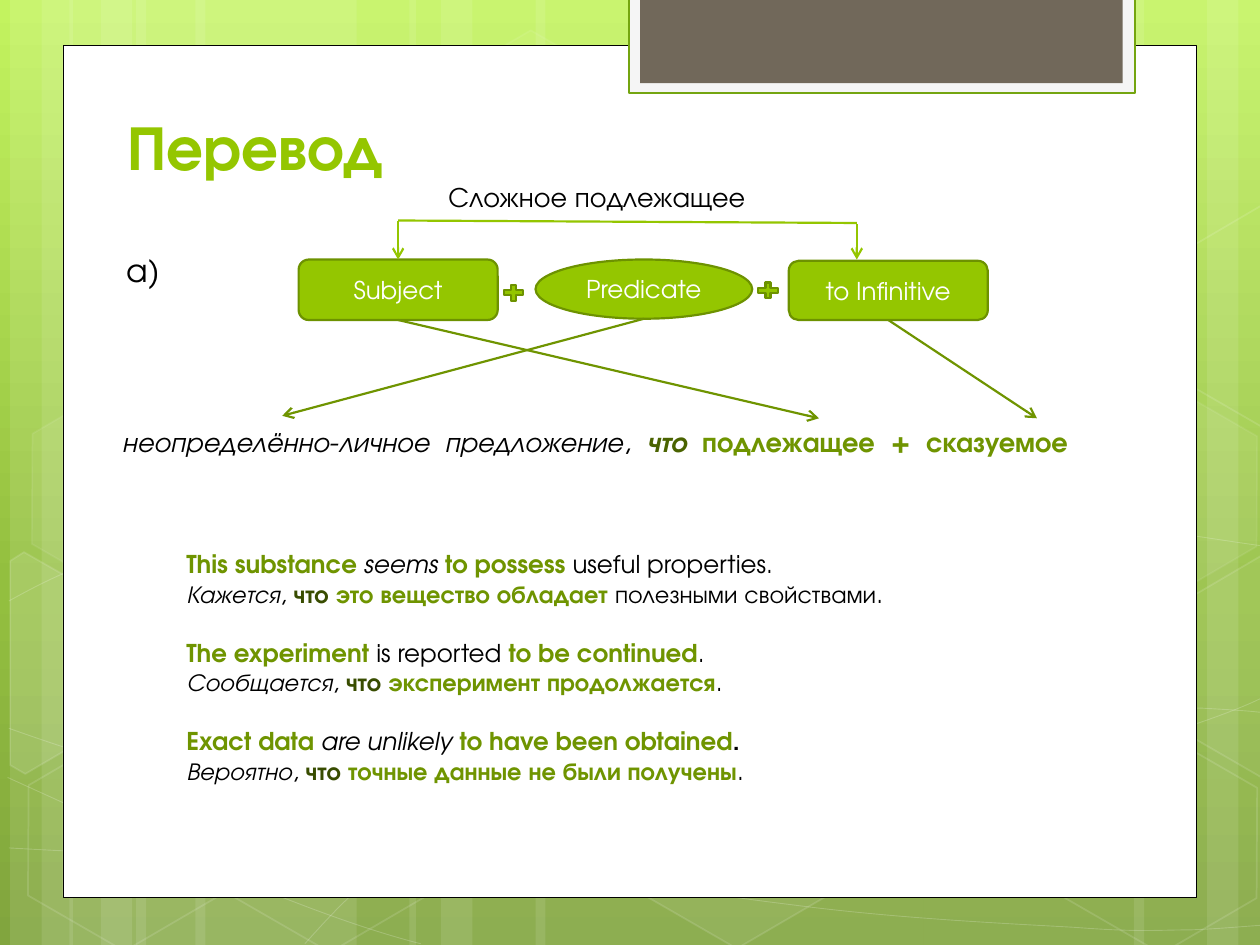
from copy import deepcopy
from math import cos, radians, sin

from lxml.etree import SubElement
from pptx import Presentation
from pptx.dml.color import RGBColor
from pptx.enum.shapes import MSO_CONNECTOR, MSO_SHAPE
from pptx.enum.text import MSO_ANCHOR, PP_ALIGN
from pptx.oxml.ns import qn
from pptx.util import Inches, Pt

FONT = "TeX Gyre Adventor"
TILT = 30
COLORS = {
    "white": "FFFFFF", "black": "000000", "lime": "94C600", "edge": "6D9200",
    "olive": "6F9400", "moss": "4A6300", "dark": "384C00", "tab": "F5F5F5",
    "tab edge": "74A510", "brown": "71685A",
    "top": "C3F35F", "middle": "93BF3F", "bottom": "81A53E",
}
BACKGROUND = [("top", 0), ("middle", 0.62), ("bottom", 1)]
STRIPS = [(1.08, 1.75), (0.08, 0.5), (0.33, 0.83), (1.55, 1.75), (0.55, 0.5), (0.8, 0.83),
          (7.33, 1.75), (9.58, 0.5), (9, 0.83), (4.25, 3.08), (3.25, 0.5), (3.5, 0.83)]
CURVES = [
    ([(0.07, 6.73), (0.61, 6.76), (1.15, 6.79), (1.9, 6.78), (2.65, 6.77), (3.58, 6.75),
      (4.58, 6.65), (5.58, 6.55), (7, 6.36), (7.92, 6.17), (8.83, 5.98), (9.77, 5.68), (10.07, 5.51)], None),
    ([(0.07, 4.77), (0.36, 4.61), (0.65, 4.46), (1.21, 4.31), (1.78, 4.16), (2.59, 3.94),
      (3.47, 3.87), (4.36, 3.8), (5.44, 3.79), (6.54, 3.87), (7.64, 3.95), (9.47, 4.26), (10.07, 4.34)], None),
    ([(0.06, 6.17), (1.27, 6.72), (2.47, 7.27), (3.34, 7.49)], None),
    ([(0.07, 5.78), (0.38, 5.89), (0.7, 6), (1.28, 6.16), (1.86, 6.31), (2.73, 6.56), (3.57, 6.73),
      (4.4, 6.9), (5.45, 7.08), (6.28, 7.18), (7.11, 7.29), (8, 7.33), (8.53, 7.36),
      (9.05, 7.4), (9.19, 7.38), (9.45, 7.38), (9.71, 7.37), (9.89, 7.35), (10.07, 7.34)], None),
    ([(2.42, 7.49), (2.6, 7.29), (2.78, 7.09), (3.02, 6.91), (3.26, 6.73), (3.6, 6.53), (3.88, 6.39),
      (4.16, 6.25), (4.33, 6.19), (4.7, 6.09), (5.06, 5.99), (5.73, 5.85), (6.08, 5.78),
      (6.44, 5.71), (6.49, 5.71), (6.8, 5.69), (7.11, 5.66), (7.6, 5.63), (7.94, 5.62),
      (8.29, 5.61), (8.86, 5.62), (8.86, 5.62), (9.53, 5.62),
      (9.71, 5.63), (9.88, 5.64), (9.97, 5.65), (10.06, 5.66), (10.03, 5.65), (10.06, 5.66)], 21),
]
HEXAGONS = [(3.34, 0.36, 4, 8), (4.97, 5.89, 6, 12), (0.11, 5.91, None, 12),
            (0.14, 3.12, 7, 8), (1.74, 5.92, None, 12), (7.53, 4.53, 10, 12),
            (8.34, 5.93, None, 12), (8.34, 3.14, 7, 8)]
CUT_HEXAGONS = [
    ((0.36, 5.35), [(0.08, 4.45), (0.19, 4.38), (0.96, 4.82), (0.95, 5.7), (0.2, 6.14), (0.08, 6.07)], 10),
    ((9.85, 5.2), [(9.26, 4.85), (10.01, 4.41), (10.09, 4.46), (10.09, 6.13), (10.02, 6.17), (9.26, 5.73)], 4),
    ((9.85, 2.41), [(9.26, 2.07), (10.01, 1.63), (10.1, 1.68), (10.09, 3.35), (10.02, 3.39), (9.26, 2.95)], None),
]
PANELS = [((0.5, 0.36, 9, 6.76), "white", "black", 0.5),
          ((4.99, -0.02, 4.02, 0.76), "tab", "tab edge", 1.25),
          ((5.08, -0.02, 3.83, 0.68), "brown", None, 0)]
TITLE = [[("Перевод", "lime", "b")]]
TERMS = [("Predicate", MSO_SHAPE.OVAL, (4.25, 2.06, 1.72, 0.47)),
         ("Subject", MSO_SHAPE.ROUNDED_RECTANGLE, (2.37, 2.06, 1.58, 0.48)),
         ("to Infinitive", MSO_SHAPE.ROUNDED_RECTANGLE, (6.26, 2.07, 1.58, 0.47))]
PLUSES = [(3.97, 2.24, 0.21, 0.17), (5.99, 2.22, 0.21, 0.17)]
LABELS = [
    ((0.91, 1.94, 0.47, 0.4), 18, [[("a)", "black", "")]]),
    ((0.87, 3.32, 8.46, 0.37), 16, [[
        ("неопределённо-личное  предложение", "black", "i"), (",  ", "black", ""),
        ("что  ", "moss", "bi"), ("подлежащее  +  сказуемое", "olive", "b")]]),
    ((3.46, 1.38, 2.82, 0.37), 16, [[("Сложное подлежащее", "black", "")]]),
]
EXAMPLES = [
    [("This substance ", "olive", "b"), ("seems ", "black", "i"),
     ("to possess ", "olive", "b"), ("useful properties.", "black", "")],
    [("Кажется", "black", "i"), (", ", "black", ""), ("что ", "dark", "b"),
     ("это вещество обладает ", "olive", "b"), ("полезными свойствами.", "black", "")],
    [("The experiment ", "olive", "b"), ("is reported ", "black", ""),
     ("to be continued", "olive", "b"), (".", "black", "")],
    [("Сообщается", "black", "i"), (", ", "black", ""), ("что ", "dark", "b"),
     ("эксперимент продолжается", "olive", "b"), (".", "black", "")],
    [("Exact data ", "olive", "b"), ("are unlikely ", "black", "i"),
     ("to have been obtained", "olive", "b"), (".", "black", "b")],
    [("Вероятно", "black", "i"), (", ", "black", ""), ("что ", "dark", "b"),
     ("точные данные не были получены", "olive", "b"), (".", "black", "")],
]


def rgb(name):
    return RGBColor.from_string(COLORS[name])


def set_alpha(parent, percent):
    color = parent.find(qn("a:solidFill")).find(qn("a:srgbClr"))
    SubElement(color, qn("a:alpha"), val=str(percent * 1000))


def paint(shape, fill=None, line=None, width=1, fill_alpha=None, line_alpha=None):
    shape.shadow.inherit = False
    properties = shape.element.spPr
    if fill:
        shape.fill.solid()
        shape.fill.fore_color.rgb = rgb(fill)
        if fill_alpha:
            set_alpha(properties, fill_alpha)
    else:
        shape.fill.background()
    if line:
        shape.line.color.rgb = rgb(line)
        shape.line.width = Pt(width)
        if line_alpha:
            set_alpha(properties.find(qn("a:ln")), line_alpha)
    else:
        shape.line.fill.background()


def add_shape(slide, kind, box, **style):
    shape = slide.shapes.add_shape(kind, *map(Inches, box))
    paint(shape, **style)
    return shape


def add_outline(slide, points, close, **style):
    corners = [(Inches(x), Inches(y)) for x, y in points]
    builder = slide.shapes.build_freeform(*corners[0])
    builder.add_line_segments(corners[1:], close=close)
    shape = builder.convert_to_shape()
    paint(shape, **style)
    return shape


def bend(shape, straight):
    lines = list(shape.element.spPr.iter(qn("a:lnTo")))
    if straight is not None:
        lines.pop(straight)
    for first, second, third in zip(lines[::3], lines[1::3], lines[2::3]):
        curve = first.makeelement(qn("a:cubicBezTo"))
        first.addprevious(curve)
        for line in (first, second, third):
            curve.append(line[0])
            line.getparent().remove(line)


def untilt(point, center):
    x, y = point[0] - center[0], point[1] - center[1]
    cosine, sine = cos(radians(TILT)), sin(radians(TILT))
    return center[0] + x * cosine + y * sine, center[1] - x * sine + y * cosine


def write(frame, paragraphs, size, align=PP_ALIGN.LEFT):
    frame.word_wrap = True
    for index, runs in enumerate(paragraphs):
        paragraph = frame.paragraphs[0] if index == 0 else frame.add_paragraph()
        paragraph.alignment = align
        for text, color, style in runs:
            run = paragraph.add_run()
            run.text = text
            run.font.name = FONT
            run.font.size = Pt(size)
            run.font.bold = "b" in style
            run.font.italic = "i" in style
            run.font.color.rgb = rgb(color)


def add_label(slide, box, size, paragraphs):
    frame = slide.shapes.add_textbox(*map(Inches, box)).text_frame
    write(frame, paragraphs, size)
    return frame


def add_line(slide, start, end, color, arrow=True):
    line = slide.shapes.add_connector(MSO_CONNECTOR.STRAIGHT, *map(Inches, start + end))
    line.line.color.rgb = rgb(color)
    line.line.width = Pt(1.25)
    if arrow:
        SubElement(line.element.spPr.find(qn("a:ln")), qn("a:tailEnd"), type="arrow")
    SubElement(line.element.spPr, qn("a:effectLst"))
    return line


def draw_backdrop(slide):
    fill = slide.background.fill
    fill.gradient()
    fill.gradient_angle = 270
    stop_list = slide.element.find(".//" + qn("a:gsLst"))
    stop_list.append(deepcopy(stop_list[-1]))
    for stop, (color, position) in zip(fill.gradient_stops, BACKGROUND):
        stop.color.rgb = rgb(color)
        stop.position = position
    for left, width in STRIPS:
        add_shape(slide, MSO_SHAPE.RECTANGLE, (left, 0, width, 7.5), fill="white", fill_alpha=10)
    for points, straight in CURVES:
        bend(add_outline(slide, points, False, line="white", width=0.5, line_alpha=20), straight)
    for left, top, alpha, line_alpha in HEXAGONS:
        hexagon = add_shape(slide, MSO_SHAPE.HEXAGON, (left, top, 1.75, 1.52), line="white",
                            fill=alpha and "white", fill_alpha=alpha, line_alpha=line_alpha)
        hexagon.rotation = TILT
        hexagon.adjustments[0] = 0.285
    for center, points, alpha in CUT_HEXAGONS:
        add_outline(slide, [untilt(point, center) for point in points], True, fill=alpha and "white",
                    fill_alpha=alpha, line="white", line_alpha=12).rotation = TILT
    for box, fill, line, width in PANELS:
        add_shape(slide, MSO_SHAPE.RECTANGLE, box, fill=fill, line=line, width=width)


def draw_scheme(slide):
    terms = {}
    for text, kind, box in TERMS:
        terms[text] = add_shape(slide, kind, box, fill="lime", line="edge", width=1.25)
        terms[text].text_frame.vertical_anchor = MSO_ANCHOR.MIDDLE
        write(terms[text].text_frame, [[(text, "white", "")]], 14, PP_ALIGN.CENTER)
    add_line(slide, (3.16, 1.75), (6.8, 1.77), "lime", arrow=False)
    add_line(slide, (3.16, 1.75), (3.16, 2.06), "lime").end_connect(terms["Subject"], 0)
    add_line(slide, (6.8, 1.78), (6.8, 2.06), "lime")
    for box in PLUSES:
        add_shape(slide, MSO_SHAPE.MATH_PLUS, box, fill="lime", line="edge", width=1.25)
    add_line(slide, (5.11, 2.53), (2.24, 3.3), "olive")
    for term, start, end in [("Subject", (3.16, 2.54), (6.5, 3.32)),
                             ("to Infinitive", (7.05, 2.54), (8.23, 3.32))]:
        add_line(slide, start, end, "olive").begin_connect(terms[term], 2)


def main():
    """Build the slide on translating the complex subject."""
    presentation = Presentation()
    presentation.slide_width, presentation.slide_height = Inches(10), Inches(7.5)
    slide = presentation.slides.add_slide(presentation.slide_layouts[5])
    draw_backdrop(slide)
    title = slide.shapes.title
    title.element.getparent().append(title.element)
    title.left, title.top, title.width, title.height = map(Inches, (0.91, 0.76, 7.76, 0.74))
    title.text_frame.vertical_anchor = MSO_ANCHOR.BOTTOM
    write(title.text_frame, TITLE, 36)
    draw_scheme(slide)
    for box, size, paragraphs in LABELS:
        add_label(slide, box, size, paragraphs)
    examples = add_label(slide, (1.38, 4.31, 7.09, 1.99), 14, EXAMPLES)
    for paragraph in examples.paragraphs[2::2]:
        paragraph.space_before = Pt(17)
    presentation.save("out.pptx")


if __name__ == "__main__":
    main()
